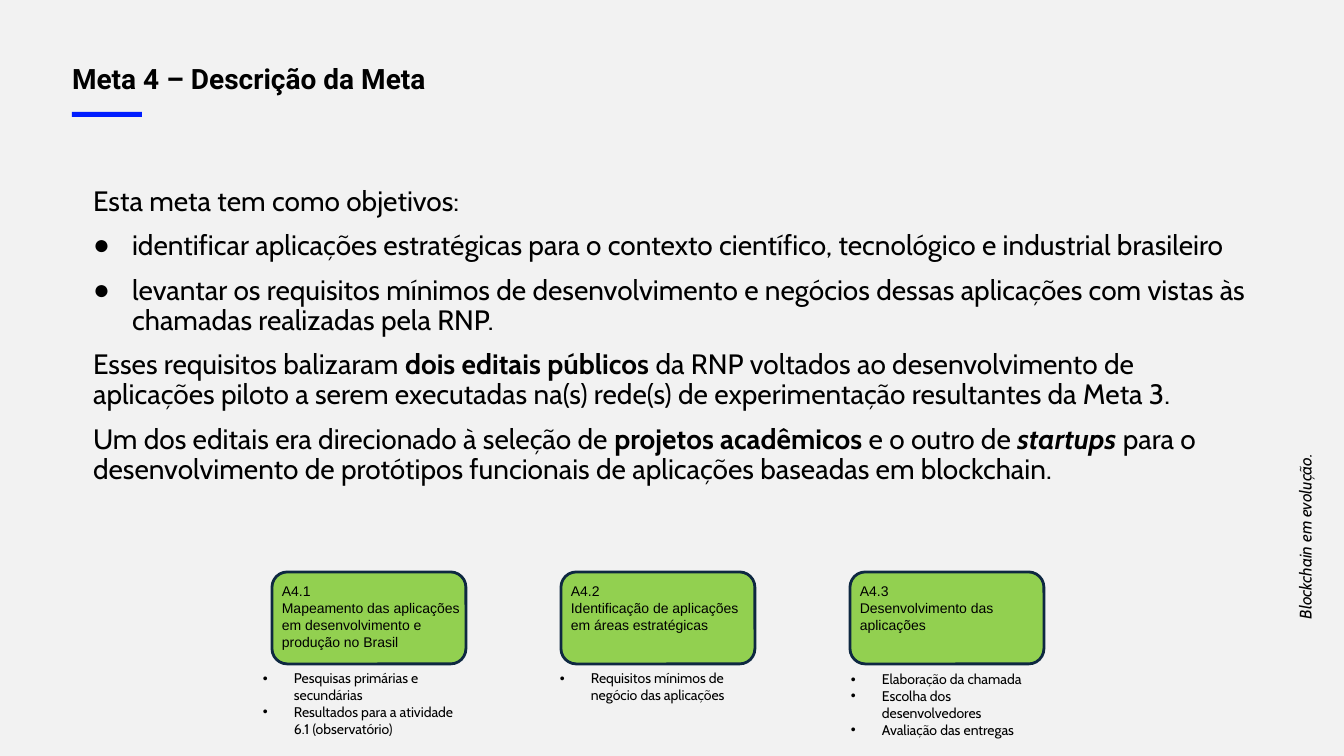
from lxml import etree
from pptx import Presentation
from pptx import util as u
from pptx.dml.color import RGBColor
from pptx.enum import shapes, text
from pptx.oxml.ns import qn

# Content
TITLE = "Meta 4 – Descrição da Meta"
SIDE = "Blockchain em evolução."
# Each body paragraph: bulleted?, then runs of (words, style)
BODY = [
    (False, [("Esta meta tem como objetivos:", "")]),
    (True, [("identificar aplicações estratégicas para o contexto científico, "
             "tecnológico e industrial brasileiro", "")]),
    (True, [("levantar os requisitos mínimos de desenvolvimento e negócios dessas "
             "aplicações com vistas às chamadas realizadas pela RNP.", "")]),
    (False, [("Esses requisitos balizaram ", ""), ("dois editais públicos ", "b"),
             ("da RNP voltados ao desenvolvimento de aplicações piloto a serem "
              "executadas na(s) rede(s) de experimentação resultantes da Meta 3.", "")]),
    (False, [("Um dos editais era direcionado à seleção de ", ""),
             ("projetos acadêmicos ", "b"), ("e o outro de ", ""), ("startups ", "bi"),
             ("para o desenvolvimento de protótipos funcionais de aplicações "
              "baseadas em blockchain.", "")]),
]
# Each card: code, name, list place (left, top, width), list items
CARDS = [
    ("A4.1", "Mapeamento das aplicações em desenvolvimento e produção no Brasil",
     (253, 665, 226), ["Pesquisas primárias e secundárias",
                       "Resultados para a atividade 6.1 (observatório)"]),
    ("A4.2", "Identificação de aplicações em áreas estratégicas",
     (550, 665, 226), ["Requisitos mínimos de negócio das aplicações"]),
    ("A4.3", "Desenvolvimento das aplicações",
     (841, 666, 218), ["Elaboração da chamada", "Escolha dos desenvolvedores",
                       "Avaliação das entregas"]),
]
COLORS = {"back": "F2F2F2", "rule": "001DFF", "card": "92D050",
          "edge": "0E2841", "ink": "000000"}
CARD_X, CARD_Y, CARD_W, CARD_H, PITCH = 272, 572, 194, 92, 289


def px(n):
    return round(n * 914400 / 100.8)


def color(name):
    return RGBColor.from_string(COLORS[name])


def place(shape, left, top, width, height):
    shape.left, shape.top = px(left), px(top)
    shape.width, shape.height = px(width), px(height)


def style(para, face, size, bold=False, italic=False):
    font = para.font
    font.name, font.size = face, u.Pt(size)
    font.bold, font.italic = bold, italic
    font.color.rgb = color("ink")


def indent(para, left, hang=0, mark=None):
    props = para._p.get_or_add_pPr()
    props.set("marL", str(px(left)))
    props.set("indent", str(px(-hang)))
    if not mark:
        etree.SubElement(props, qn("a:buNone"))
        return
    tint = etree.SubElement(props, qn("a:buClr"))
    etree.SubElement(tint, qn("a:srgbClr")).set("val", COLORS["ink"])
    etree.SubElement(props, qn("a:buFont")).set("typeface", "Arial")
    etree.SubElement(props, qn("a:buChar")).set("char", mark)


def add_box(slide, left, top, width, height, lines, face, size, mark=None, italic=False):
    box = slide.shapes.add_textbox(px(left), px(top), px(width), px(height))
    frame = box.text_frame
    frame.word_wrap = True
    frame.text = "\n".join(lines)
    for para in frame.paragraphs:
        if mark:
            indent(para, 31, 31, mark)
        style(para, face, size, italic=italic)
    return box


def add_block(slide, kind, left, top, width, height, fill):
    block = slide.shapes.add_shape(kind, px(left), px(top), px(width), px(height))
    block.shadow.inherit = False
    block.fill.solid()
    block.fill.fore_color.rgb = color(fill)
    block.line.fill.background()
    return block


def main():
    deck = Presentation()
    deck.slide_width, deck.slide_height = px(1344), px(756)
    slide = deck.slides.add_slide(deck.slide_layouts[1])
    slide.background.fill.solid()
    slide.background.fill.fore_color.rgb = color("back")
    title, body = slide.placeholders

    # Title, rule and side note
    place(title, 62, 56, 377, 44)
    frame = title.text_frame
    frame.text = TITLE
    frame.word_wrap = False
    frame.auto_size = text.MSO_AUTO_SIZE.NONE
    para = frame.paragraphs[0]
    para.alignment = text.PP_ALIGN.LEFT
    style(para, "Roboto", 20, bold=True)
    add_block(slide, shapes.MSO_SHAPE.RECTANGLE, 72, 112, 70, 5, "rule")
    note = add_box(slide, 1207, 516, 196, 30, [SIDE], "Cabin", 12, italic=True)
    note.rotation = 270

    # Body
    place(body, 72, 111, 1200, 451)
    frame = body.text_frame
    frame.auto_size = text.MSO_AUTO_SIZE.NONE
    frame.vertical_anchor = text.MSO_ANCHOR.MIDDLE
    for i, (listed, runs) in enumerate(BODY):
        para = frame.add_paragraph() if i else frame.paragraphs[0]
        if listed:
            indent(para, 50, 39, "●")
        else:
            indent(para, 11)
        para.line_spacing = 0.9
        para.space_before = u.Pt(10 if i else 0)
        style(para, "Cabin", 20)
        for words, look in runs:
            run = para.add_run()
            run.text = words
            if look:
                run.font.bold = "b" in look
                run.font.italic = "i" in look

    # Cards with their lists
    for i, (code, name, (left, top, width), items) in enumerate(CARDS):
        x = CARD_X + i * PITCH
        card = add_block(slide, shapes.MSO_SHAPE.ROUNDED_RECTANGLE,
                         x, CARD_Y, CARD_W, CARD_H, "card")
        card.line.color.rgb = color("edge")
        card.line.width = u.Pt(2)
        add_box(slide, x, CARD_Y + 6, 199, 70, [code, name], "Arial", 10)
        add_box(slide, left, top, width, 78, items, "Cabin", 10, mark="•")

    deck.save("out.pptx")


if __name__ == "__main__":
    main()
